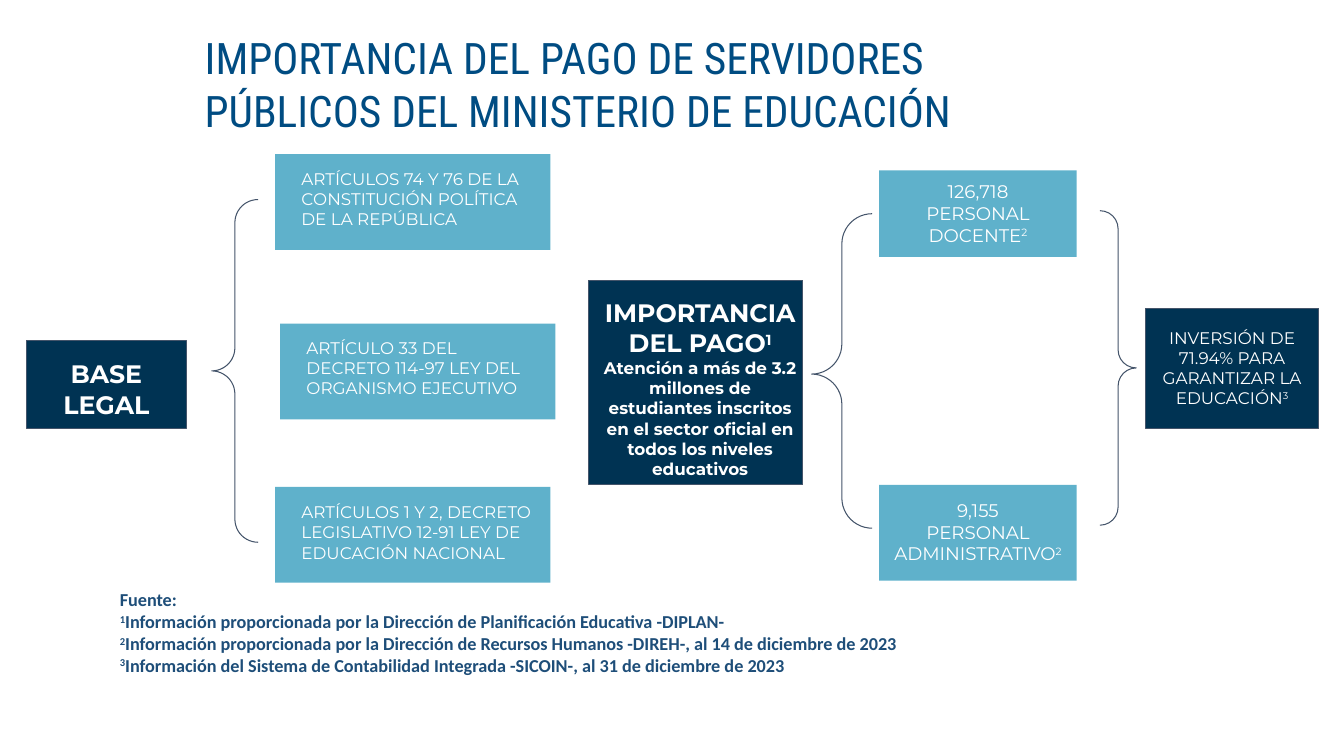
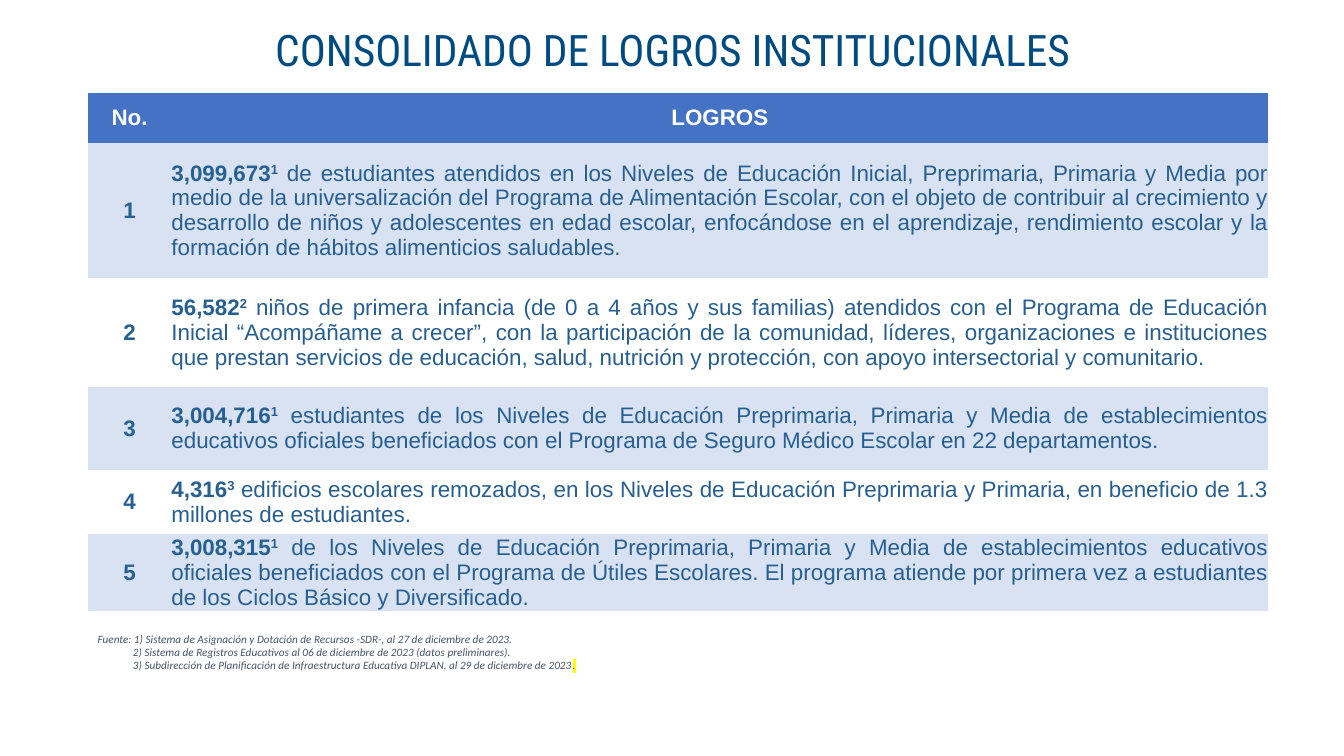
from lxml import etree
from pptx import Presentation
from pptx.dml.color import RGBColor
from pptx.enum.shapes import MSO_SHAPE
from pptx.enum.text import MSO_ANCHOR, MSO_AUTO_SIZE, PP_ALIGN
from pptx.oxml.ns import qn
from pptx.util import Inches, Pt

LEFT, MID, FULL = PP_ALIGN.LEFT, PP_ALIGN.CENTER, PP_ALIGN.JUSTIFY
TOP, CENTRE = MSO_ANCHOR.TOP, MSO_ANCHOR.MIDDLE
RECT = MSO_SHAPE.RECTANGLE
OPEN, CLOSE = MSO_SHAPE.LEFT_BRACE, MSO_SHAPE.RIGHT_BRACE
NO_GRID = "{2D5ABB26-0587-4C30-8999-92F81FD0307C}"

HUES = {
    "title": "004C82", "navy": "003353", "sky": "5FB1CB",
    "slate": "44546A", "source": "1E4E79", "white": "FFFFFF",
    "head": "4472C4", "band": "D9E2F3", "text": "265F91", "mark": "FFFF00",
}

STYLES = {
    "law": dict(fill="sky", sizes=(12, 12), align=LEFT, sides=(0.26, 0.01)),
    "staff": dict(fill="sky", sizes=(13, 13), align=MID, sides=(0.1, 0.1)),
    "base": dict(fill="navy", sizes=(18, 18), align=MID, sides=(0.1, 0.1), bold=True),
    "core": dict(fill="navy", sizes=(18, 12), align=MID, sides=(0.1, 0.01), bold=True),
    "spend": dict(fill="navy", sizes=(12, 12), align=MID, sides=(0.1, 0.1)),
}

BOXES = [
    ("base", (0.26, 3.38, 1.59, 0.87), 0.18, ["BASE LEGAL"]),
    ("law", (2.73, 1.53, 2.73, 0.95), 0.14,
     ["ARTÍCULOS 74 Y 76 DE LA CONSTITUCIÓN POLÍTICA", "DE LA REPÚBLICA"]),
    ("law", (2.78, 3.21, 2.73, 0.95), 0.14,
     ["ARTÍCULO 33 DEL", "DECRETO 114-97 LEY DEL", "ORGANISMO EJECUTIVO"]),
    ("law", (2.73, 4.83, 2.73, 0.95), 0.15,
     ["ARTÍCULOS 1 Y 2, DECRETO LEGISLATIVO 12-91 LEY DE EDUCACIÓN NACIONAL"]),
    ("core", (5.84, 2.78, 2.12, 2.03), 0.17,
     ["IMPORTANCIA DEL PAGO^1", "Atención a más de 3.2 millones de",
      "estudiantes inscritos en el sector oficial en todos los niveles educativos"]),
    ("staff", (8.72, 1.69, 1.96, 0.86), 0.1, ["126,718", "PERSONAL", "DOCENTE^2"]),
    ("staff", (8.72, 4.81, 1.96, 0.95), 0.14,
     ["9,155", "PERSONAL", "ADMINISTRATIVO^2"]),
    ("spend", (11.36, 3.06, 1.72, 1.19), 0.19,
     ["INVERSIÓN DE 71.94% PARA GARANTIZAR LA EDUCACIÓN^3"]),
]

BRACES = [
    (OPEN, (2.1, 1.98, 0.46, 3.4), 0.5),
    (OPEN, (8.05, 2.12, 0.6, 3.12), 0.51),
    (CLOSE, (10.91, 2.09, 0.36, 3.12), 0.5),
]

NOTES = [
    "Fuente:",
    "^1^Información proporcionada por la Dirección de Planificación Educativa -DIPLAN-",
    "^2^Información proporcionada por la Dirección de Recursos Humanos -DIREH-, al 14 de diciembre de 2023",
    "^3^Información del Sistema de Contabilidad Integrada -SICOIN-, al 31 de diciembre de 2023",
]

GOALS = [
    "3,099,673^1^ de estudiantes atendidos en los Niveles de Educación Inicial, Preprimaria, Primaria y Media por medio de la universalización del Programa de Alimentación Escolar, con el objeto de contribuir al crecimiento y desarrollo de niños y adolescentes en edad escolar, enfocándose en el aprendizaje, rendimiento escolar y la formación de hábitos alimenticios saludables.",
    "56,582^2^ niños de primera infancia (de 0 a 4 años y sus familias) atendidos con el Programa de Educación Inicial “Acompáñame a crecer”, con la participación de la comunidad, líderes, organizaciones e instituciones que prestan servicios de educación, salud, nutrición y protección, con apoyo intersectorial y comunitario.",
    "3,004,716^1^ estudiantes de los Niveles de Educación Preprimaria, Primaria y Media de establecimientos educativos oficiales beneficiados con el Programa de Seguro Médico Escolar en 22 departamentos.",
    "4,316^3^ edificios escolares remozados, en los Niveles de Educación Preprimaria y Primaria, en beneficio de 1.3 millones de estudiantes.",
    "3,008,315^1^ de los Niveles de Educación Preprimaria, Primaria y Media de establecimientos educativos oficiales beneficiados con el Programa de Útiles Escolares. El programa atiende por primera vez a estudiantes de los Ciclos Básico y Diversificado.",
]
ROWS = [("No.", "LOGROS")] + [(str(n), goal) for n, goal in enumerate(GOALS, 1)]
WIDTHS = [0.83, 10.88]
HEIGHTS = [0.5, 1.34, 1.08, 0.82, 0.64, 0.76]

ORIGINS = [
    "Fuente: 1) Sistema de Asignación y Dotación de Recursos -SDR-, al 27 de diciembre de 2023.",
    "2) Sistema de Registros Educativos al 06 de diciembre de 2023 (datos preliminares).",
    "3) Subdirección de Planificación de Infraestructura Educativa DIPLAN, al 29 de diciembre de 2023",
]


def color(name):
    return RGBColor.from_string(HUES[name])


def place(at):
    return [Inches(v) for v in at]


def write(par, text, size, face, hue, bold=False, italic=False, align=LEFT):
    par.alignment = align
    for spot, part in enumerate(text.split("^")):
        if not part:
            continue
        run = par.add_run()
        run.text = part
        font = run.font
        font.size, font.name = Pt(size), face
        font.bold, font.italic = bold, italic
        font.color.rgb = color(hue)
        if spot % 2:
            run._r.get_or_add_rPr().set("baseline", "30000")


def pars(frame, lines):
    for spot, line in enumerate(lines):
        yield (frame.add_paragraph() if spot else frame.paragraphs[0]), line


def pad(frame, left, top, right, low):
    frame.margin_left, frame.margin_right = Inches(left), Inches(right)
    frame.margin_top, frame.margin_bottom = Inches(top), Inches(low)


def add_page(deck, text, at, align):
    page = deck.slides.add_slide(deck.slide_layouts[5])
    title = page.shapes.title
    title.left, title.top, title.width, title.height = place(at)
    frame = title.text_frame
    frame.word_wrap, frame.auto_size = True, MSO_AUTO_SIZE.NONE
    frame.vertical_anchor = CENTRE
    pad(frame, 0.1, 0.05, 0.1, 0.05)
    write(frame.paragraphs[0], text, 31, "Roboto Condensed", "title", align=align)
    return page


def add_form(page, kind, at, fill, edge):
    form = page.shapes.add_shape(kind, *place(at))
    form.shadow.inherit = False
    if fill:
        form.fill.solid()
        form.fill.fore_color.rgb = color(fill)
    else:
        form.fill.background()
    if edge:
        form.line.color.rgb = color("slate")
        form.line.width = Pt(0.75)
    else:
        form.line.fill.background()
    return form


def add_box(page, kind, at, top, lines):
    style = STYLES[kind]
    fill = style["fill"]
    frame = add_form(page, RECT, at, fill, fill == "navy").text_frame
    frame.word_wrap, frame.vertical_anchor = True, TOP
    left, right = style["sides"]
    pad(frame, left, top, right, 0)
    first, rest = style["sizes"]
    for par, line in pars(frame, lines):
        size = first if line == lines[0] else rest
        write(par, line, size, "Montserrat", "white",
              style.get("bold", False), align=style["align"])


def add_notes(page, at, lines, size, hue, bold=False, italic=False):
    frame = page.shapes.add_textbox(*place(at)).text_frame
    frame.word_wrap = True
    for par, line in pars(frame, lines):
        write(par, line, size, "Calibri", hue, bold, italic)
    return frame


def add_goals(page):
    at = (0.87, 0.92, sum(WIDTHS), sum(HEIGHTS))
    grid = page.shapes.add_table(len(ROWS), len(WIDTHS), *place(at)).table
    grid.first_row = grid.horz_banding = False
    grid._tbl.tblPr.find(qn("a:tableStyleId")).text = NO_GRID
    for col, width in zip(grid.columns, WIDTHS):
        col.width = Inches(width)
    for r, (row, height) in enumerate(zip(ROWS, HEIGHTS)):
        grid.rows[r].height = Inches(height)
        for c, text in enumerate(row):
            cell = grid.cell(r, c)
            if r == 0 or r % 2:
                cell.fill.solid()
                cell.fill.fore_color.rgb = color("band" if r else "head")
            else:
                cell.fill.background()
            cell.vertical_anchor = CENTRE
            pad(cell, 0, 0.01, 0, 0.01)
            par = cell.text_frame.paragraphs[0]
            goal = r > 0 and c == 1
            write(par, text, 16, "Arial", "text" if r else "white", True,
                  align=FULL if goal else MID)
            if goal:
                par.runs[-1].font.bold = False


def mark(run):
    rim = etree.Element(qn("a:highlight"))
    etree.SubElement(rim, qn("a:srgbClr")).set("val", HUES["mark"])
    run._r.get_or_add_rPr().find(qn("a:solidFill")).addnext(rim)


def main():
    deck = Presentation()
    deck.slide_width, deck.slide_height = Inches(13.33), Inches(7.5)

    page = add_page(
        deck, "IMPORTANCIA DEL PAGO DE SERVIDORES PÚBLICOS DEL MINISTERIO DE EDUCACIÓN",
        (1.93, 0.26, 7.84, 1.14), LEFT)
    for kind, at, tip in BRACES:
        brace = add_form(page, kind, at, None, True)
        brace.adjustments[0], brace.adjustments[1] = 0.5, tip
    for box in BOXES:
        add_box(page, *box)
    add_notes(page, (1.09, 5.79, 9.59, 0.98), NOTES, 13, "source", bold=True)

    page = add_page(deck, "CONSOLIDADO DE LOGROS INSTITUCIONALES",
                    (1.98, 0.18, 9.38, 0.62), MID)
    add_goals(page)
    frame = add_notes(page, (0.87, 6.22, 11.71, 0.77), ORIGINS, 8, "slate", italic=True)
    for par in frame.paragraphs[1:]:
        par._p.get_or_add_pPr().set("marL", str(Inches(0.35)))
    last = frame.paragraphs[-1]
    write(last, ".", 8, "Calibri", "slate", italic=True)
    mark(last.runs[-1])

    deck.save("out.pptx")


if __name__ == "__main__":
    main()
